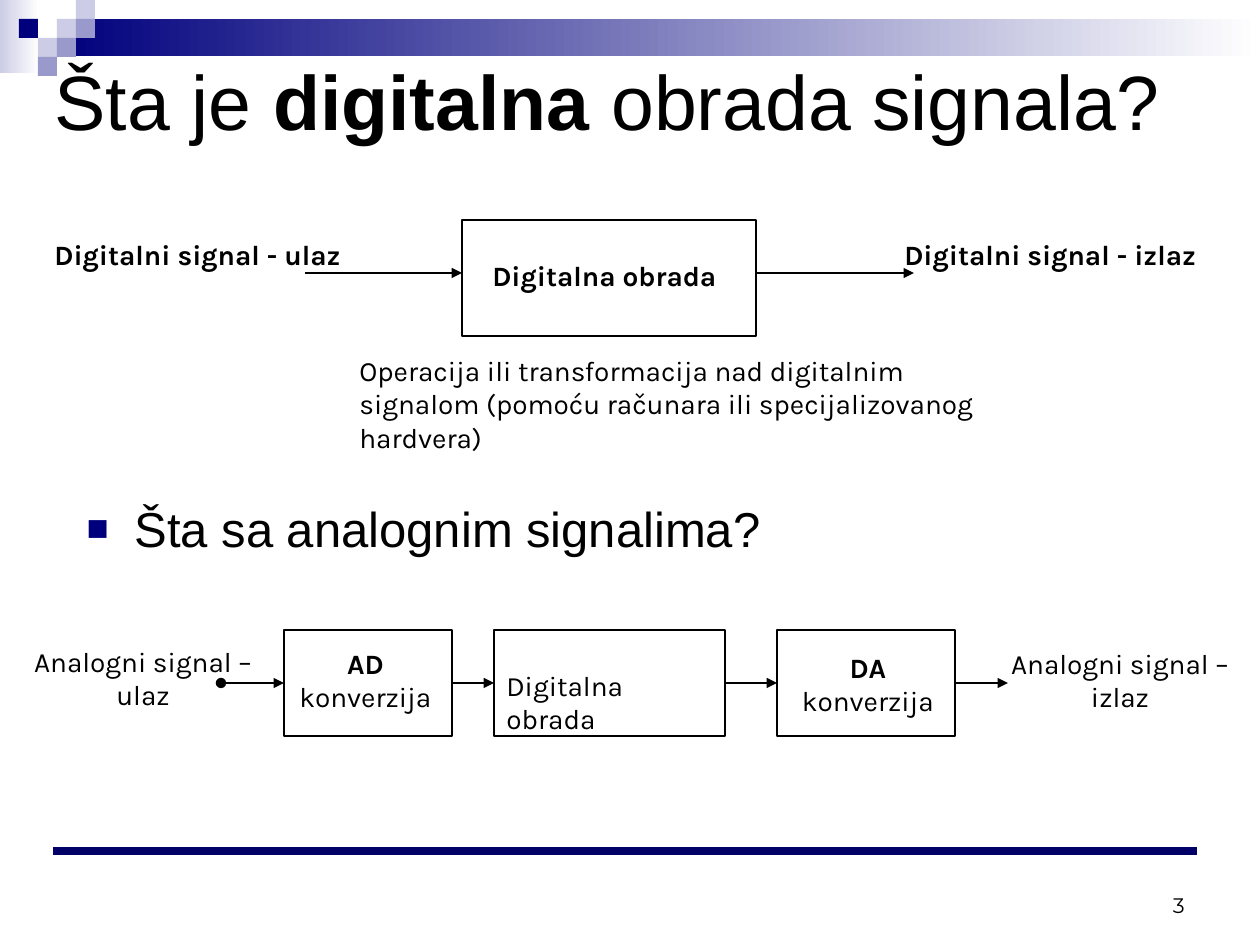
from lxml import etree
from pptx import Presentation
from pptx import util as u
from pptx.dml.color import RGBColor
from pptx.enum import shapes, text
from pptx.oxml.ns import qn

PX = 914400 // 126  # EMU per px


class Theme:
    black = RGBColor(0x00, 0x00, 0x00)
    white = RGBColor(0xFF, 0xFF, 0xFF)
    navy = RGBColor(0x00, 0x00, 0x7D)
    rule = RGBColor(0x00, 0x00, 0x66)
    pale = RGBColor(0xCC, 0xCC, 0xE6)
    mid = RGBColor(0x99, 0x99, 0xCC)
    heading, label, number = "Arial", "Karla", "Montserrat"
    title_pt, body_pt, label_pt, number_pt = u.Pt(44), u.Pt(28), u.Pt(16), u.Pt(12)
    thin, thick = u.Pt(0.75), u.Pt(4.5)


prs = Presentation()
prs.slide_width, prs.slide_height = u.Inches(10), u.Inches(7.5)
s = prs.slides.add_slide(prs.slide_layouts[1])


def add_runs(p, parts, font, size):
    """Add (wording, bold) runs to a paragraph."""
    for wording, bold in parts:
        r = p.add_run()
        r.text = wording
        r.font.name, r.font.size, r.font.bold = font, size, bold
        r.font.color.rgb = Theme.black


def add_line(x1, y1, x2, y2, color=Theme.black, width=Theme.thin, **ends):
    """Add a straight line; ends may give headEnd and tailEnd types."""
    c = s.shapes.add_connector(shapes.MSO_CONNECTOR.STRAIGHT,
                               x1 * PX, y1 * PX, x2 * PX, y2 * PX)
    c.line.color.rgb, c.line.width = color, width
    ln = c.line._get_or_add_ln()
    for tag, kind in ends.items():
        etree.SubElement(ln, qn("a:" + tag), type=kind)
    etree.SubElement(c.element.spPr, qn("a:effectLst"))
    return c


# Header gradients
for x, y, w, h, start in [(0, 0, 39, 73, Theme.pale), (57, 19, 1203, 37, Theme.navy)]:
    sp = s.shapes.add_shape(shapes.MSO_SHAPE.RECTANGLE, x * PX, y * PX, w * PX, h * PX)
    sp.shadow.inherit = False
    sp.line.fill.background()
    sp.fill.gradient()
    sp.fill.gradient_angle = 0
    for stop, color, position in zip(sp.fill.gradient_stops, (start, Theme.white), (0, 1)):
        stop.color.rgb, stop.position = color, position

# Header squares on a grid of 19 px
SQ = 19
for col, row, color in [(3, 1, Theme.pale), (4, 0, Theme.pale), (4, 1, Theme.mid),
                        (2, 2, Theme.pale), (1, 1, Theme.navy), (3, 2, Theme.mid),
                        (2, 3, Theme.mid)]:
    sp = s.shapes.add_shape(shapes.MSO_SHAPE.RECTANGLE,
                            col * SQ * PX, row * SQ * PX, SQ * PX, SQ * PX)
    sp.shadow.inherit = False
    sp.fill.solid()
    sp.fill.fore_color.rgb = color
    sp.line.fill.background()

# Footer rule
add_line(53, 851, 1197, 851, Theme.rule, Theme.thick)

# Title, in front of the header
title = s.shapes.title
title.left, title.top, title.width, title.height = 42 * PX, 42 * PX, 1200 * PX, 116 * PX
title.element.getparent().append(title.element)
tf = title.text_frame
tf.auto_size = text.MSO_AUTO_SIZE.NONE
tf.vertical_anchor = text.MSO_ANCHOR.MIDDLE
p = tf.paragraphs[0]
p.alignment = text.PP_ALIGN.LEFT
add_runs(p, [("Šta je ", False), ("digitalna", True), (" obrada signala?", False)],
         Theme.heading, Theme.title_pt)

# Body question with a square bullet
body = s.placeholders[1]
body.left, body.top, body.width, body.height = 74 * PX, 504 * PX, 1071 * PX, 305 * PX
tf = body.text_frame
tf.auto_size = text.MSO_AUTO_SIZE.NONE
p = tf.paragraphs[0]
p.line_spacing = 0.8
add_runs(p, [("Šta sa analognim signalima?", False)], Theme.heading, Theme.body_pt)
pPr = p._p.get_or_add_pPr()
pPr.set("marL", str(48 * PX))
pPr.set("indent", str(-48 * PX))
etree.SubElement(etree.SubElement(pPr, qn("a:buClr")), qn("a:srgbClr"), val=str(Theme.navy))
etree.SubElement(pPr, qn("a:buSzPct"), val="75000")
etree.SubElement(pPr, qn("a:buFont"), typeface=Theme.heading)
etree.SubElement(pPr, qn("a:buChar"), char="■")

# Process boxes: one in the digital chain, three in the analog chain
boxes = []
for x, y, w, h in [(462, 220, 294, 116), (284, 630, 168, 106),
                   (494, 630, 231, 106), (777, 630, 178, 106)]:
    sp = s.shapes.add_shape(shapes.MSO_SHAPE.RECTANGLE, x * PX, y * PX, w * PX, h * PX)
    sp.shadow.inherit = False
    sp.fill.background()
    sp.line.color.rgb, sp.line.width = Theme.black, Theme.thin
    boxes.append(sp)
ad, digital, da = boxes[1:]

# Digital chain arrows
for x1, x2 in [(305, 462), (756, 914)]:
    add_line(x1, 273, x2, 273, tailEnd="triangle")

# Analog chain arrows
add_line(221, 683, 284, 683, headEnd="oval", tailEnd="triangle").end_connect(ad, 1)
for a, b in [(ad, digital), (digital, da)]:
    c = add_line(0, 683, 1, 683, tailEnd="triangle")
    c.begin_connect(a, 3)
    c.end_connect(b, 1)
add_line(955, 683, 1008, 683, tailEnd="triangle").begin_connect(da, 3)

# Labels: place, wrap, alignment, paragraphs of (wording, bold) runs
LEFT, CENTER = text.PP_ALIGN.LEFT, text.PP_ALIGN.CENTER
labels = [
    (480, 252, 268, 47, False, LEFT, [[("Digitalna obrada", True)]]),
    (42, 231, 324, 47, False, LEFT, [[("Digitalni signal - ulaz", True)]]),
    (892, 231, 329, 47, False, LEFT, [[("Digitalni signal - izlaz", True)]]),
    (347, 347, 640, 113, True, LEFT,
     [[("Operacija ili transformacija nad digitalnim signalom "
        "(pomoću računara ili specijalizovanog hardvera)", False)]]),
    (21, 638, 244, 81, False, CENTER, [[("Analogni signal –", False)], [("ulaz", False)]]),
    (284, 640, 163, 81, True, CENTER, [[("AD", True), (" konverzija", False)]]),
    (494, 662, 228, 47, True, LEFT, [[("Digitalna obrada", False)]]),
    (779, 644, 178, 81, True, CENTER, [[("DA ", True), ("konverzija", False)]]),
    (998, 640, 244, 81, False, CENTER, [[("Analogni signal –", False)], [("izlaz", False)]]),
]
for x, y, w, h, wrap, align, paragraphs in labels:
    tf = s.shapes.add_textbox(x * PX, y * PX, w * PX, h * PX).text_frame
    tf.word_wrap = wrap
    tf.auto_size = text.MSO_AUTO_SIZE.SHAPE_TO_FIT_TEXT
    for i, parts in enumerate(paragraphs):
        p = tf.add_paragraph() if i else tf.paragraphs[0]
        p.alignment = align
        add_runs(p, parts, Theme.label, Theme.label_pt)

# Page number
tf = s.shapes.add_textbox(903 * PX, 861 * PX, 294 * PX, 63 * PX).text_frame
tf.word_wrap = True
tf.vertical_anchor = text.MSO_ANCHOR.BOTTOM
p = tf.paragraphs[0]
p.alignment = text.PP_ALIGN.RIGHT
add_runs(p, [("3", False)], Theme.number, Theme.number_pt)

prs.save("out.pptx")
